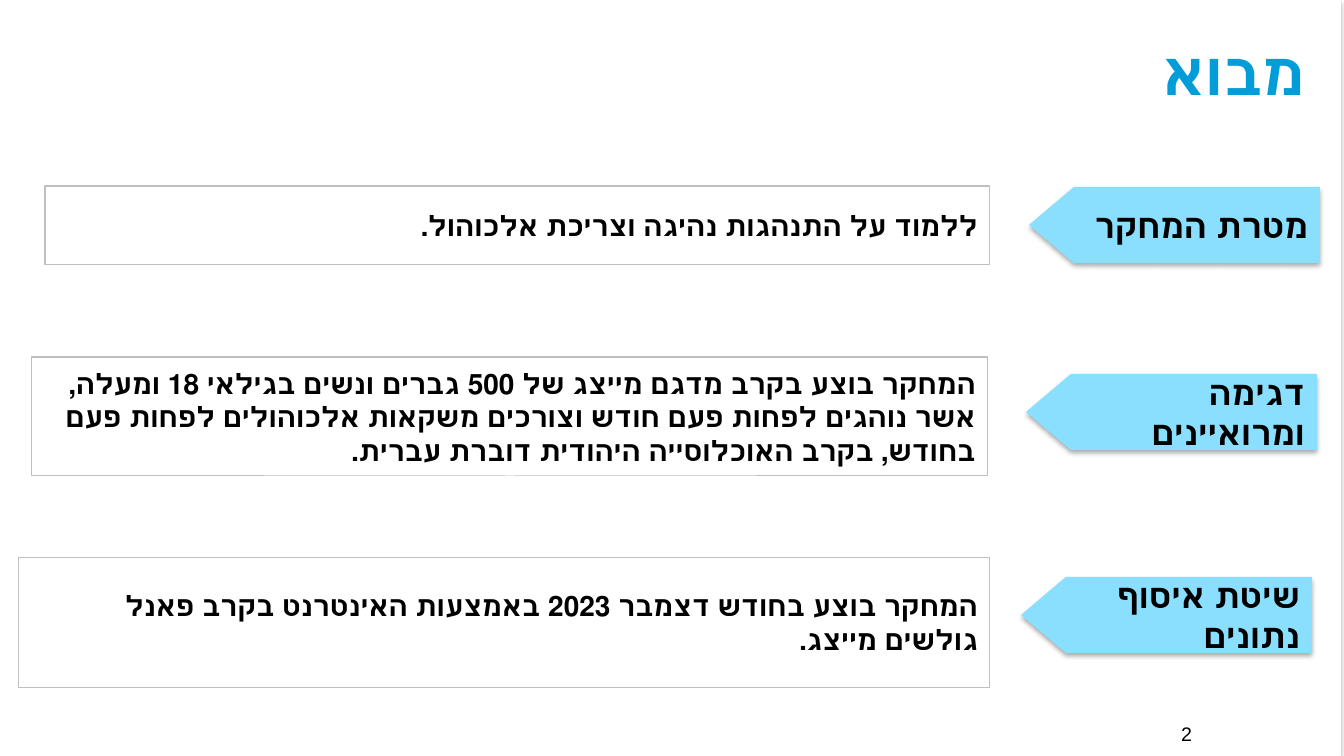
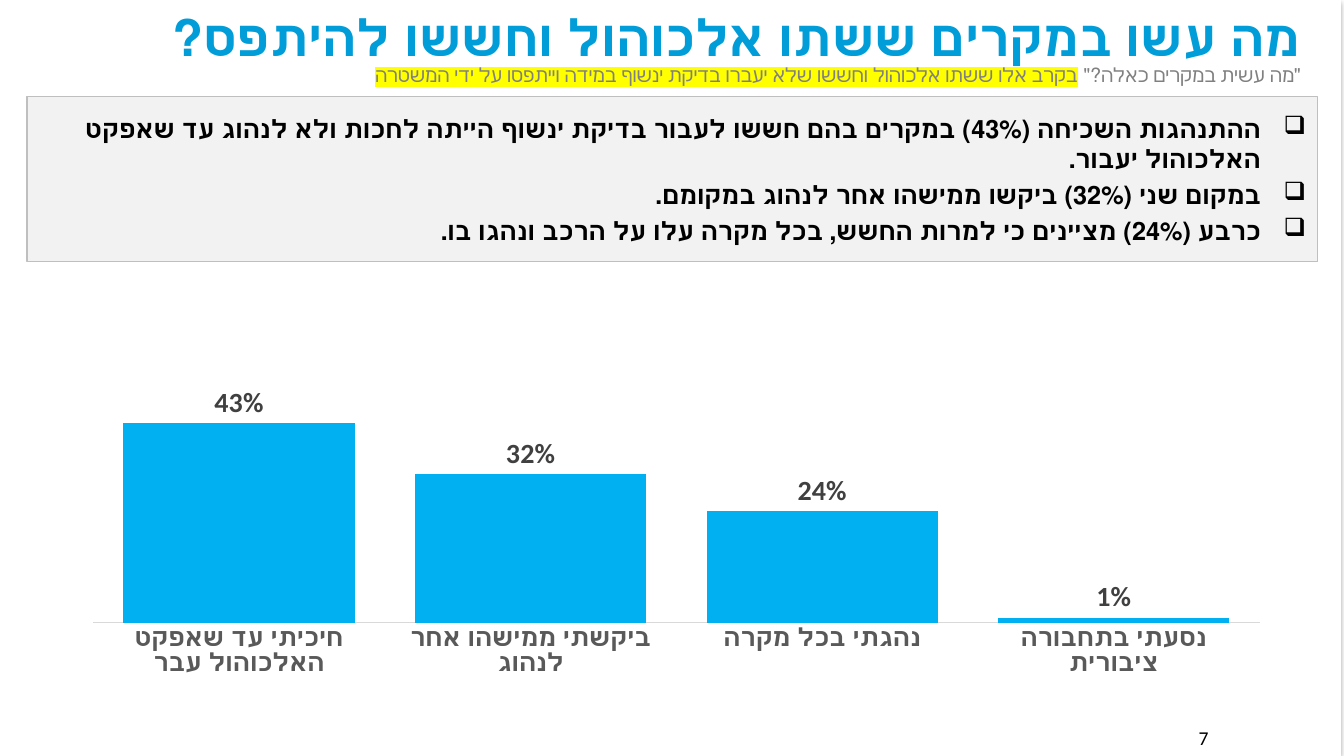
from lxml import etree
from pptx import Presentation
from pptx import util as u
from pptx.chart.data import CategoryChartData
from pptx.dml.color import RGBColor
from pptx.enum import chart as ch, shapes, text
from pptx.oxml import parse_xml
from pptx.oxml.ns import nsdecls, qn

# Shared style
PX = 914400 / 100.8
W, H = 1344, 756
WHITE, BLACK, TITLE = "FFFFFF", "000000", "009DD9"
BORDER, PANEL, ARROW, BAR = "BFBFBF", "F2F2F2", "8ADFFF", "00B0F0"
GREY, LABEL, AXIS, RULE, MARK = "808080", "404040", "595959", "D9D9D9", "FFFF00"
RIGHT, CENTER = text.PP_ALIGN.RIGHT, text.PP_ALIGN.CENTER
TOP, MIDDLE = text.MSO_ANCHOR.TOP, text.MSO_ANCHOR.MIDDLE
RECT, PENTAGON = shapes.MSO_SHAPE.RECTANGLE, shapes.MSO_SHAPE.PENTAGON

# Content: label, arrow left and top, statement, statement box
INTRO = [
    ("מטרת המחקר", (1029, 187),
     "ללמוד על התנהגות נהיגה וצריכת אלכוהול.", (45, 186, 945, 79)),
    ("דגימה\vומרואיינים", (1026, 374),
     "המחקר בוצע בקרב מדגם מייצג של 500 גברים ונשים בגילאי 18 ומעלה, "
     "אשר נוהגים לפחות פעם חודש וצורכים משקאות אלכוהולים לפחות פעם בחודש, "
     "בקרב האוכלוסייה היהודית דוברת עברית.", (32, 357, 956, 119)),
    ("שיטת איסוף נתונים", (1021, 577),
     "המחקר בוצע בחודש דצמבר 2023 באמצעות האינטרנט בקרב פאנל גולשים מייצג.",
     (19, 557, 971, 131)),
]
QUESTION = '"מה עשית במקרים כאלה?" '
BASE = "בקרב אלו ששתו אלכוהול וחששו שלא יעברו בדיקת ינשוף במידה וייתפסו על ידי המשטרה"
FINDINGS = [
    "ההתנהגות השכיחה (43%) במקרים בהם חששו לעבור בדיקת ינשוף הייתה לחכות ולא לנהוג עד שאפקט האלכוהול יעבור.",
    "במקום שני (32%) ביקשו ממישהו אחר לנהוג במקומם.",
    "כרבע (24%) מציינים כי למרות החשש, בכל מקרה עלו על הרכב ונהגו בו.",
]
ACTIONS = [
    ("חיכיתי עד שאפקט האלכוהול עבר", 0.43),
    ("ביקשתי ממישהו אחר לנהוג", 0.32),
    ("נהגתי בכל מקרה", 0.24),
    ("נסעתי בתחבורה ציבורית", 0.01),
]


def rgb(value):
    return RGBColor.from_string(value)


def place(*lengths):
    return [u.Emu(round(n * PX)) for n in lengths]


def style_font(font, size, color, bold, name):
    font.size, font.bold, font.name = u.Pt(size), bold, name
    font.color.rgb = rgb(color)


def add_shadow(sp):
    sp._element.spPr.append(parse_xml(
        f'<a:effectLst {nsdecls("a")}><a:outerShdw blurRad="44450" dist="27940" '
        'dir="5400000" algn="t" rotWithShape="0"><a:srgbClr val="000000">'
        '<a:alpha val="32000"/></a:srgbClr></a:outerShdw></a:effectLst>'))


def add_box(s, box, kind=RECT, fill=None, line=None, shadow=False):
    sp = s.shapes.add_shape(kind, *place(*box))
    if shadow:
        add_shadow(sp)
    else:
        sp.shadow.inherit = False
    if fill:
        sp.fill.solid()
        sp.fill.fore_color.rgb = rgb(fill)
    else:
        sp.fill.background()
    if line:
        sp.line.color.rgb = rgb(line)
        sp.line.width = u.Pt(0.75)
    else:
        sp.line.fill.background()
    return sp


def write(sp, lines, size, color=BLACK, bold=True, name="Arial",
          align=RIGHT, anchor=TOP, bullet=None):
    tf = sp.text_frame
    tf.word_wrap, tf.vertical_anchor = True, anchor
    tf.margin_left, tf.margin_right, tf.margin_top, tf.margin_bottom = place(12, 12, 6, 6)
    tf.text = "\n".join(lines)
    for i, p in enumerate(tf.paragraphs):
        p.alignment = align
        if i:
            p.space_before = u.Pt(4)
        ppr = p._p.get_or_add_pPr()
        if align == RIGHT:
            ppr.set("rtl", "1")
        if bullet:
            indent = place(45)[0]
            ppr.set("marL", str(indent))
            ppr.set("indent", str(-indent))
            etree.SubElement(ppr, qn("a:buChar")).set("char", bullet)
        for r in p.runs:
            style_font(r.font, size, color, bold, name)
    return tf


def add_text(s, box, line, size, **style):
    return write(s.shapes.add_textbox(*place(*box)), [line], size, **style)


def new_slide(prs, title, title_at, title_size, number, number_at, number_font):
    s = prs.slides.add_slide(prs.slide_layouts[6])
    add_box(s, (-3, 0, W, H), fill=WHITE, shadow=True)
    add_text(s, (*title_at, 1291, 72), title, title_size, color=TITLE, name="Calibri")
    add_text(s, (*number_at, 313, 40), number, 14, bold=False,
             name=number_font, align=CENTER)
    return s


def add_actions_chart(s, box):
    data = CategoryChartData(number_format="0%")
    data.categories = [name for name, _ in ACTIONS]
    data.add_series("Series 1", [share for _, share in ACTIONS])
    chart = s.shapes.add_chart(
        ch.XL_CHART_TYPE.COLUMN_CLUSTERED, *place(*box), data).chart
    chart.has_legend = chart.has_title = False
    style_font(chart.font, 20, BLACK, True, "Calibri")

    plot = chart.plots[0]
    plot.gap_width, plot.overlap, plot.vary_by_categories = 26, 3, False
    fill = plot.series[0].format.fill
    fill.solid()
    fill.fore_color.rgb = rgb(BAR)
    plot.has_data_labels = True
    labels = plot.data_labels
    labels.show_value = True
    labels.position = ch.XL_LABEL_POSITION.OUTSIDE_END
    labels.number_format, labels.number_format_is_linked = "0%", False
    style_font(labels.font, 20, LABEL, True, "Calibri")

    cat, val = chart.category_axis, chart.value_axis
    cat.major_tick_mark = cat.minor_tick_mark = ch.XL_TICK_MARK.NONE
    cat.format.line.color.rgb = rgb(RULE)
    cat.format.line.width = u.Pt(0.75)
    style_font(cat.tick_labels.font, 18, AXIS, True, "Calibri")
    val.visible = val.has_major_gridlines = False
    val.minimum_scale, val.maximum_scale = 0, 0.5

    # Fixed plot area inside the chart
    area = chart._chartSpace.chart.plotArea
    for old in area.findall(qn("c:layout")):
        area.remove(old)
    sizes = "".join(f'<c:{k} val="{v}"/>' for k, v in
                    (("x", 0.02), ("y", 0.01), ("w", 0.96), ("h", 0.8)))
    area.insert(0, parse_xml(
        f'<c:layout {nsdecls("c")}><c:manualLayout><c:layoutTarget val="inner"/>'
        f'<c:xMode val="edge"/><c:yMode val="edge"/>{sizes}</c:manualLayout></c:layout>'))


def build_intro(prs):
    s = new_slide(prs, "מבוא", (26, 29), 43, "2", (1030, 716), "Arial")
    for label, at, statement, box in INTRO:
        write(add_box(s, box, line=BORDER), [statement], 20, anchor=MIDDLE)
        sp = add_box(s, (*at, 291, 76), PENTAGON, ARROW, shadow=True)
        sp.adjustments[0] = 0.59
        sp._element.spPr.xfrm.set("flipH", "1")
        write(sp, [label], 24, name="Calibri", anchor=MIDDLE)


def build_findings(prs):
    s = new_slide(prs, "מה עשו במקרים ששתו אלכוהול וחששו להיתפס?",
                  (21, 0), 36, "7", (1047, 720), "Calibri")
    write(add_box(s, (27, 97, 1291, 165), fill=PANEL, line=BORDER),
          FINDINGS, 18, anchor=MIDDLE, bullet="❑")
    tf = add_text(s, (127, 57, 1186, 39), QUESTION, 14, color=GREY, bold=False)
    r = tf.paragraphs[0].add_run()
    r.text = BASE
    style_font(r.font, 14, GREY, False, "Arial")
    r._r.rPr.find(qn("a:latin")).addprevious(parse_xml(
        f'<a:highlight {nsdecls("a")}><a:srgbClr val="{MARK}"/></a:highlight>'))
    add_actions_chart(s, (69, 385, 1215, 293))


def main():
    prs = Presentation()
    prs.slide_width, prs.slide_height = place(W, H)
    build_intro(prs)
    build_findings(prs)
    prs.save("out.pptx")


if __name__ == "__main__":
    main()
